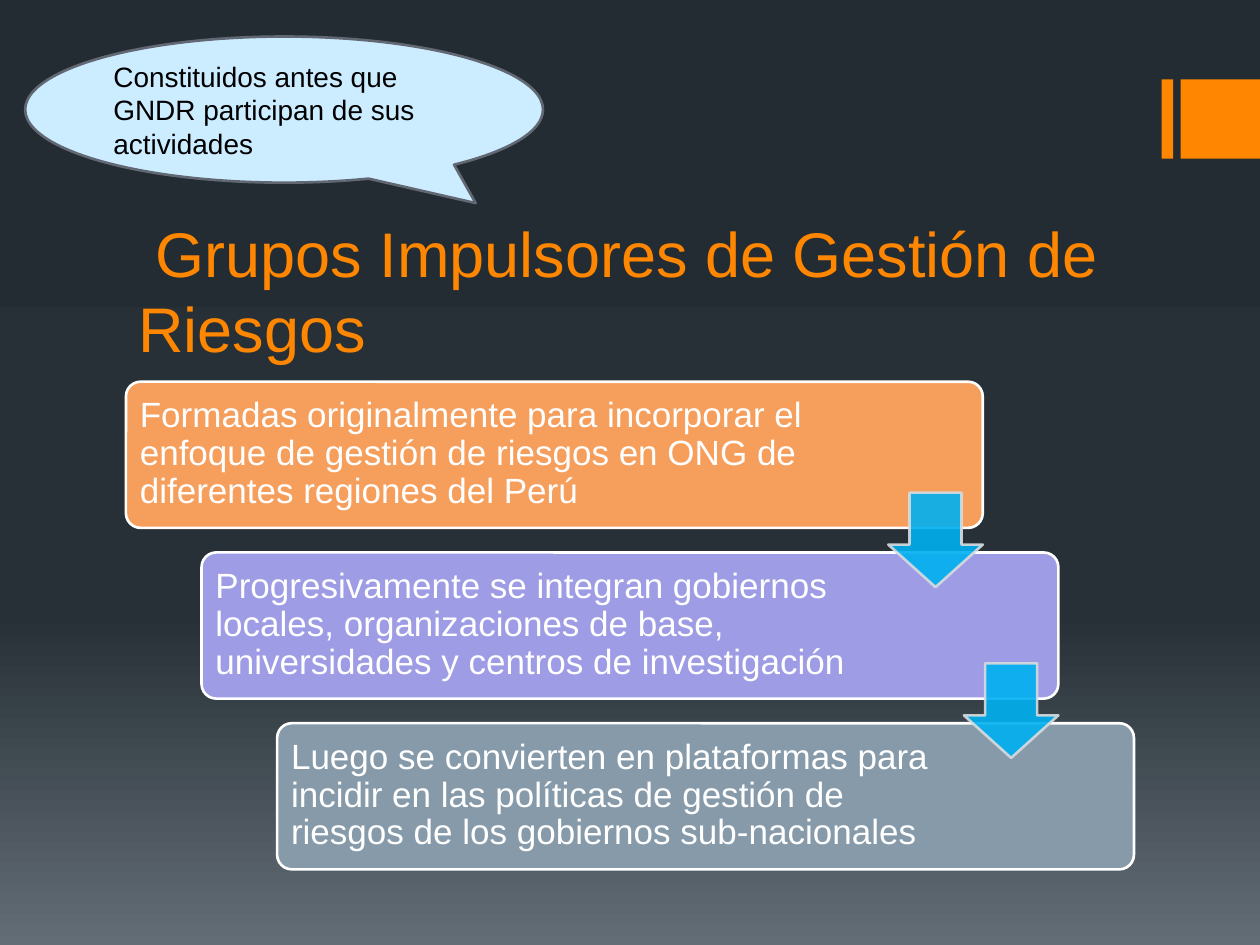
from copy import deepcopy

from lxml import etree
from pptx import Presentation
from pptx import util as u
from pptx.dml import color
from pptx.enum import shapes, text
from pptx.oxml import ns

ORANGE, WHITE, BLACK = "FF8600", "FFFFFF", "000000"
STEPS = [
    ("F69E5C", 5.55, "Formadas originalmente para incorporar el enfoque de gestión de riesgos "
     "en ONG de diferentes regiones del Perú"),
    ("9E9CE4", 5.38, "Progresivamente se integran gobiernos locales, organizaciones de base, "
     "universidades y centros de investigación"),
    ("869AA9", 5.38, "Luego se convierten en plataformas para incidir en las políticas de gestión "
     "de riesgos de los gobiernos sub-nacionales"),
]
STEP_X, STEP_Y = 0.6, 1.355


def rgb(value):
    return color.RGBColor.from_string(value)


class SlideBuilder:
    """Holds the style and the current slide, and draws each kind of element."""

    font = "Arial"
    line_width = 1.5

    def __init__(self, slide):
        self.slide = slide

    def background(self, stops, angle):
        fill = self.slide.background.fill
        fill.gradient()
        fill.gradient_angle = angle
        stop_list = self.slide.element.find(".//" + ns.qn("a:gsLst"))
        while len(stop_list) < len(stops):
            stop_list.append(deepcopy(stop_list[0]))
        for stop, (position, value) in zip(fill.gradient_stops, stops):
            stop.position = position
            stop.color.rgb = rgb(value)

    def shape(self, preset, box, fill, line=None, adjust=(), alpha=None):
        figure = self.slide.shapes.add_shape(preset, *map(u.Inches, box))
        figure.shadow.inherit = False
        for index, value in enumerate(adjust):
            figure.adjustments[index] = value
        figure.fill.solid()
        figure.fill.fore_color.rgb = rgb(fill)
        if line:
            figure.line.color.rgb = rgb(line)
            figure.line.width = u.Pt(self.line_width)
        else:
            figure.line.fill.background()
        if alpha:
            for paint in figure.element.spPr.iter(ns.qn("a:srgbClr")):
                etree.SubElement(paint, ns.qn("a:alpha"), val=str(alpha * 1000))
        return figure

    def put_text(self, figure, words, size, value, anchor, inset=None, **spacing):
        frame = figure.text_frame
        frame_format = {"word_wrap": True, "vertical_anchor": anchor}
        if inset:
            for side in ("left", "top", "right", "bottom"):
                frame_format["margin_" + side] = u.Inches(inset)
        paragraph = frame.paragraphs[0]
        run = paragraph.add_run()
        run.text = words
        run.font.color.rgb = rgb(value)
        formats = (
            (frame, frame_format),
            (paragraph, {"alignment": text.PP_ALIGN.LEFT, **spacing}),
            (run.font, {"name": self.font, "size": u.Pt(size)}),
        )
        for target, values in formats:
            for name, setting in values.items():
                setattr(target, name, setting)

    def label(self, box, *args, **kwargs):
        self.put_text(self.slide.shapes.add_textbox(*map(u.Inches, box)), *args, **kwargs)


def main():
    deck = Presentation()
    deck.slide_width, deck.slide_height = u.Inches(10), u.Inches(7.5)
    builder = SlideBuilder(deck.slides.add_slide(deck.slide_layouts[6]))
    preset, anchor = shapes.MSO_SHAPE, text.MSO_ANCHOR

    builder.background([(0, "242C33"), (0.65, "273037"), (1, "636D76")], 270)
    for left, width in ((9.22, 0.09), (9.37, 0.63)):
        builder.shape(preset.RECTANGLE, (left, 0.63, width, 0.63), ORANGE)
    builder.label((1, 1.69, 8, 1.26), " Grupos Impulsores de Gestión de Riesgos",
                  36, ORANGE, anchor.BOTTOM)

    for index, (fill, text_width, words) in enumerate(STEPS):
        left, top = 1 + index * STEP_X, 3.03 + index * STEP_Y
        builder.shape(preset.ROUNDED_RECTANGLE, (left, top, 6.8, 1.16), fill, WHITE, [0.1])
        builder.label((left + 0.03, top + 0.03, text_width, 1.09), words, 20, WHITE,
                      anchor.MIDDLE, inset=0.08, line_spacing=0.9)
    for index in range(len(STEPS) - 1):
        builder.shape(preset.DOWN_ARROW,
                      (7.05 + index * STEP_X, 3.91 + index * STEP_Y, 0.75, 0.75),
                      "00B0F0", "D9DBDE", [0.55, 0.45], alpha=90)

    callout = builder.shape(preset.OVAL_CALLOUT, (0.2, 0.29, 4.11, 1.16),
                            "CCECFF", "616873", [0.37, 0.64])
    builder.put_text(callout, "Constituidos antes que GNDR participan de sus actividades",
                     16, BLACK, anchor.MIDDLE)
    deck.save("out.pptx")


if __name__ == "__main__":
    main()
